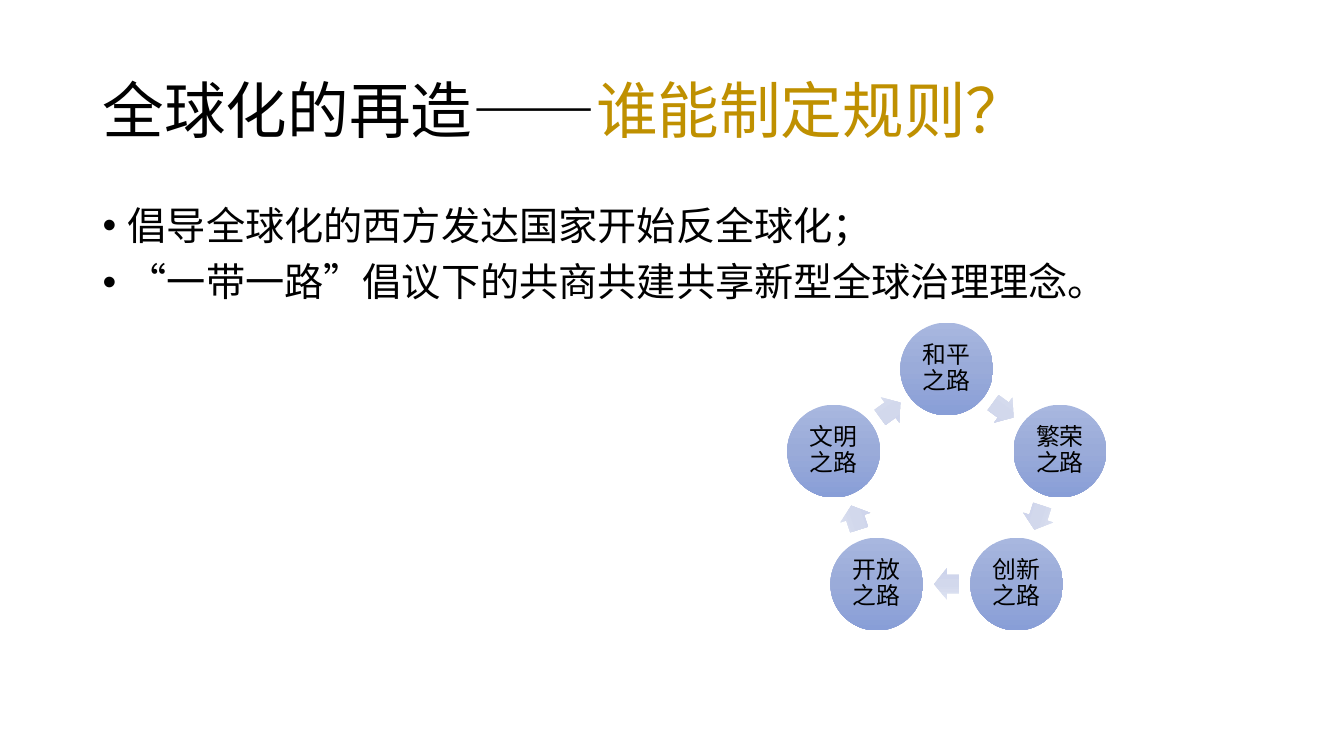
from copy import deepcopy
from math import cos, pi, radians, sin

from lxml.etree import SubElement
from pptx import Presentation
from pptx.dml.color import RGBColor
from pptx.enum.shapes import MSO_SHAPE
from pptx.enum.text import MSO_ANCHOR, PP_ALIGN
from pptx.oxml.ns import qn
from pptx.util import Inches, Pt

FONT = "Noto Sans CJK SC"
COLORS = {
    "text": "000000",
    "question": "BF9000",
    "circle": ["A8B7DF", "9AABD9", "889ED7"],
    "arrow": ["DEE3F2", "D2D8EC", "CCD3EB"],
}
TITLE = [("全球化的再造——", "text"), ("谁能制定规则？", "question")]
POINTS = [
    "倡导全球化的西方发达国家开始反全球化；",
    "“一带一路”倡议下的共商共建共享新型全球治理理念。",
]
ROADS = ["和平之路", "繁荣之路", "创新之路", "开放之路", "文明之路"]


def style_paragraph(paragraph, size):
    """Set the font, size, colour and line spacing of a paragraph."""
    paragraph.line_spacing = 0.9
    paragraph.font.size = Pt(size)
    paragraph.font.name = FONT
    paragraph.font.color.rgb = RGBColor.from_string(COLORS["text"])
    defaults = paragraph._p.pPr.find(qn("a:defRPr"))
    SubElement(defaults, qn("a:ea"), typeface=FONT)


def add_bullet(paragraph):
    """Give a paragraph a hanging round bullet."""
    properties = paragraph._p.get_or_add_pPr()
    properties.set("marL", str(Inches(0.25)))
    properties.set("indent", str(-Inches(0.25)))
    SubElement(properties, qn("a:buFont"), typeface="Arial")
    SubElement(properties, qn("a:buChar"), char="•")


def add_frame(slide, left, top, width, height):
    """Add a wrapping text box and return its text frame."""
    box = slide.shapes.add_textbox(
        Inches(left), Inches(top), Inches(width), Inches(height))
    box.text_frame.word_wrap = True
    return box.text_frame


def add_title(slide, left, top, width, height):
    """Add the two-colour title."""
    frame = add_frame(slide, left, top, width, height)
    frame.vertical_anchor = MSO_ANCHOR.MIDDLE
    paragraph = frame.paragraphs[0]
    style_paragraph(paragraph, 44)
    for words, color in TITLE:
        run = paragraph.add_run()
        run.text = words
        run.font.color.rgb = RGBColor.from_string(COLORS[color])


def add_points(slide, left, top, width, height):
    """Add the bulleted points."""
    frame = add_frame(slide, left, top, width, height)
    for index, point in enumerate(POINTS):
        paragraph = frame.add_paragraph() if index else frame.paragraphs[0]
        paragraph.text = point
        add_bullet(paragraph)
        paragraph.space_before = Pt(10)
        style_paragraph(paragraph, 28)


def add_gradient_shape(slide, preset, center_x, center_y, width, height, colors):
    """Add a borderless shape around a centre, shaded from top to bottom."""
    shape = slide.shapes.add_shape(
        preset, Inches(center_x - width / 2), Inches(center_y - height / 2),
        Inches(width), Inches(height))
    shape.shadow.inherit = False
    shape.line.fill.background()
    shape.fill.gradient()
    shape.fill.gradient_angle = 270
    stops = shape._element.spPr.find(".//" + qn("a:gsLst"))
    middle = deepcopy(stops[0])
    middle.set("pos", "50000")
    stops.insert(1, middle)
    for stop, color in zip(shape.fill.gradient_stops, colors):
        stop.color.rgb = RGBColor.from_string(color)
    return shape


def add_road_cycle(slide, left, top, size):
    """Add the ring of roads, with arrows running clockwise between them."""
    diameter = 0.92
    radius = 1.18
    center_x = left + size / 2
    center_y = top + diameter / 2 + radius
    step = 360 / len(ROADS)
    arrow_radius = radius * cos(pi / len(ROADS))
    for index, road in enumerate(ROADS):
        angle = radians(index * step)
        circle = add_gradient_shape(
            slide, MSO_SHAPE.OVAL, center_x + radius * sin(angle),
            center_y - radius * cos(angle), diameter, diameter, COLORS["circle"])
        frame = circle.text_frame
        frame.word_wrap = True
        frame.vertical_anchor = MSO_ANCHOR.MIDDLE
        frame.margin_left = frame.margin_right = Inches(0.02)
        frame.margin_top = frame.margin_bottom = Inches(0.02)
        label = frame.paragraphs[0]
        label.text = road
        label.alignment = PP_ALIGN.CENTER
        style_paragraph(label, 17)

        turn = (index + 0.5) * step
        arrow = add_gradient_shape(
            slide, MSO_SHAPE.RIGHT_ARROW,
            center_x + arrow_radius * sin(radians(turn)),
            center_y - arrow_radius * cos(radians(turn)),
            0.25, 0.31, COLORS["arrow"])
        arrow.adjustments[0] = 0.6
        arrow.adjustments[1] = 0.5
        arrow.rotation = turn


def main():
    """Build the slide and save it."""
    presentation = Presentation()
    presentation.slide_width = Inches(13.33)
    presentation.slide_height = Inches(7.5)
    slide = presentation.slides.add_slide(presentation.slide_layouts[6])
    add_title(slide, 0.92, 0.4, 11.5, 1.45)
    add_points(slide, 0.92, 2, 11.5, 4.76)
    add_road_cycle(slide, 7.81, 3.2, 3.16)
    presentation.save("out.pptx")


if __name__ == "__main__":
    main()
